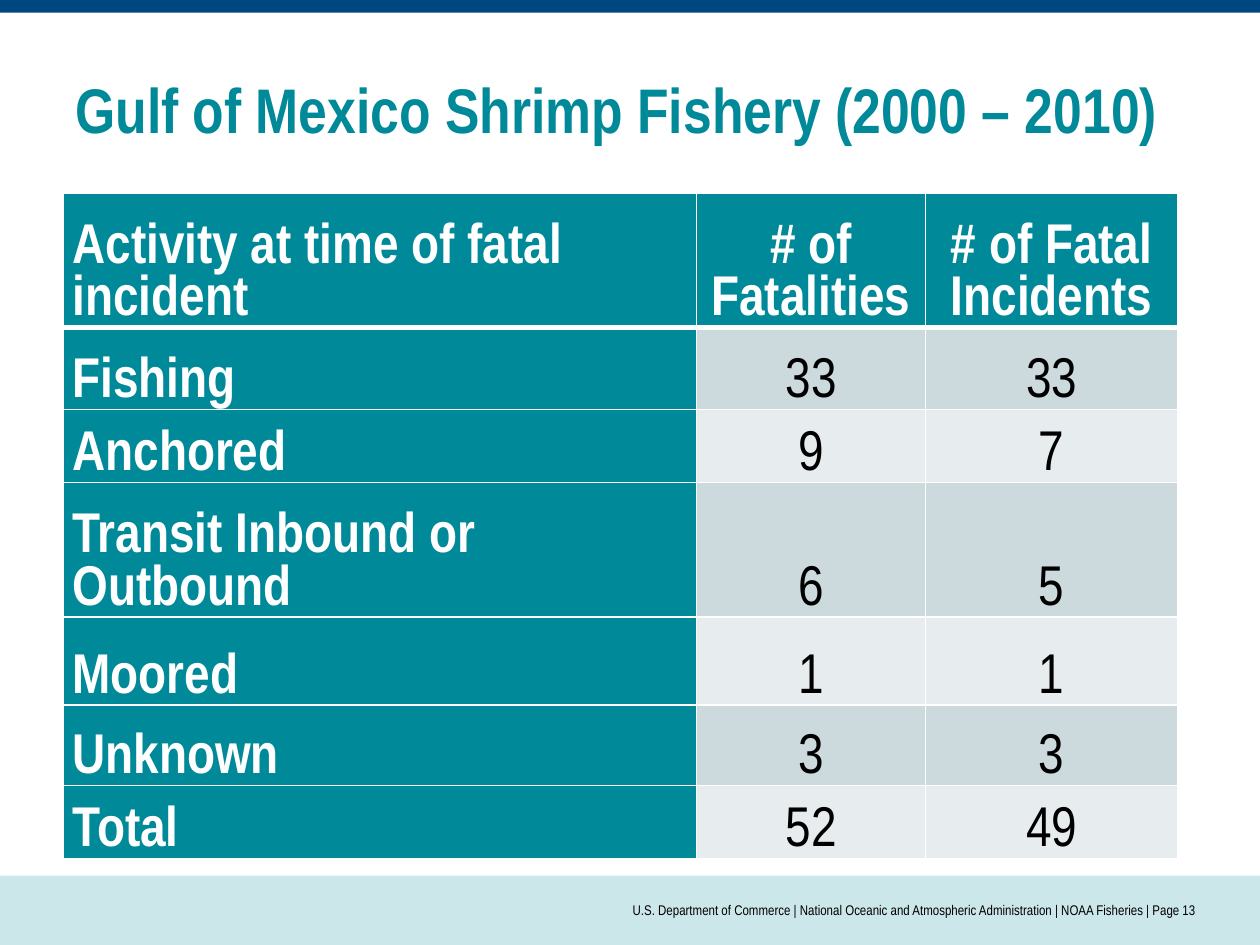
"""Build the Gulf of Mexico shrimp fishery fatalities slide."""
from lxml import etree
from pptx import Presentation
from pptx.dml.color import RGBColor
from pptx.enum.shapes import MSO_SHAPE
from pptx.enum.text import MSO_ANCHOR, PP_ALIGN
from pptx.oxml.ns import qn
from pptx.util import Pt

RECT = MSO_SHAPE.RECTANGLE
MIDDLE, BOTTOM = MSO_ANCHOR.MIDDLE, MSO_ANCHOR.BOTTOM
LEFT, CENTER, RIGHT = PP_ALIGN.LEFT, PP_ALIGN.CENTER, PP_ALIGN.RIGHT
TEAL, WHITE, BLACK = "008998", "FFFFFF", "000000"
BANDS = ["CCDADD", "E7EDEF"]


def rgb(color):
    return RGBColor.from_string(color)


def write(tf, text, size, color, bold, align):
    p = tf.paragraphs[0]
    p.alignment = align
    r = p.add_run()
    r.text = text
    r.font.name = "Arial Narrow"
    r.font.size = Pt(size)
    r.font.bold = bold
    r.font.color.rgb = rgb(color)


prs = Presentation()
prs.slide_width, prs.slide_height = Pt(720), Pt(540)
s = prs.slides.add_slide(prs.slide_layouts[6])

for top, height, color in [(500.4, 39.6, "CCE7EA"), (0, 7.2, "00467F")]:
    sp = s.shapes.add_shape(RECT, 0, Pt(top), Pt(720), Pt(height))
    sp.shadow.inherit = False
    sp.fill.solid()
    sp.fill.fore_color.rgb = rgb(color)
    sp.line.fill.background()

tf = s.shapes.add_textbox(Pt(36), Pt(35), Pt(648), Pt(53.28)).text_frame
tf.word_wrap = True
tf.vertical_anchor = MIDDLE
write(tf, "Gulf of Mexico Shrimp Fishery (2000 – 2010)", 36, TEAL, True, LEFT)

tf = s.shapes.add_textbox(Pt(180), Pt(500.4), Pt(504), Pt(39.6)).text_frame
tf.word_wrap = True
tf.vertical_anchor = MIDDLE
tf.margin_left = tf.margin_right = 0
footer = ["U.S. Department of Commerce", "National Oceanic and Atmospheric Administration",
          "NOAA Fisheries", "Page 13"]
write(tf, " | ".join(footer), 8, BLACK, False, RIGHT)

rows = [
    ("Activity at time of fatal incident", "# of Fatalities", "# of Fatal Incidents"),
    ("Fishing", "33", "33"),
    ("Anchored", "9", "7"),
    ("Transit Inbound or Outbound", "6", "5"),
    ("Moored", "1", "1"),
    ("Unknown", "3", "3"),
    ("Total", "52", "49"),
]
widths = [362, 131, 144]
heights = [76.3, 46.8, 41.8, 41.8, 50.4, 46, 41.8]
table = s.shapes.add_table(len(rows), len(widths), Pt(36), Pt(110.2),
                           Pt(sum(widths)), Pt(sum(heights))).table
for column, width in zip(table.columns, widths):
    column.width = Pt(width)
for row, height in zip(table.rows, heights):
    row.height = Pt(height)

for i, texts in enumerate(rows):
    for j, text in enumerate(texts):
        cell = table.cell(i, j)
        heading = i == 0 or j == 0
        cell.vertical_anchor = BOTTOM
        cell.margin_left = cell.margin_right = Pt(5.4)
        cell.margin_top = cell.margin_bottom = 0
        write(cell.text_frame, text, 32, WHITE if heading else BLACK,
              heading, CENTER if j else LEFT)
        tcPr = cell._tc.get_or_add_tcPr()
        for side in "LRTB":
            thick = (i, side) in [(0, "B"), (1, "T")]
            ln = etree.SubElement(tcPr, qn(f"a:ln{side}"), w=str(Pt(3 if thick else 1)))
            fill = etree.SubElement(ln, qn("a:solidFill"))
            etree.SubElement(fill, qn("a:srgbClr"), val=WHITE)
        cell.fill.solid()
        cell.fill.fore_color.rgb = rgb(TEAL if heading else BANDS[(i - 1) % 2])

prs.save("out.pptx")
